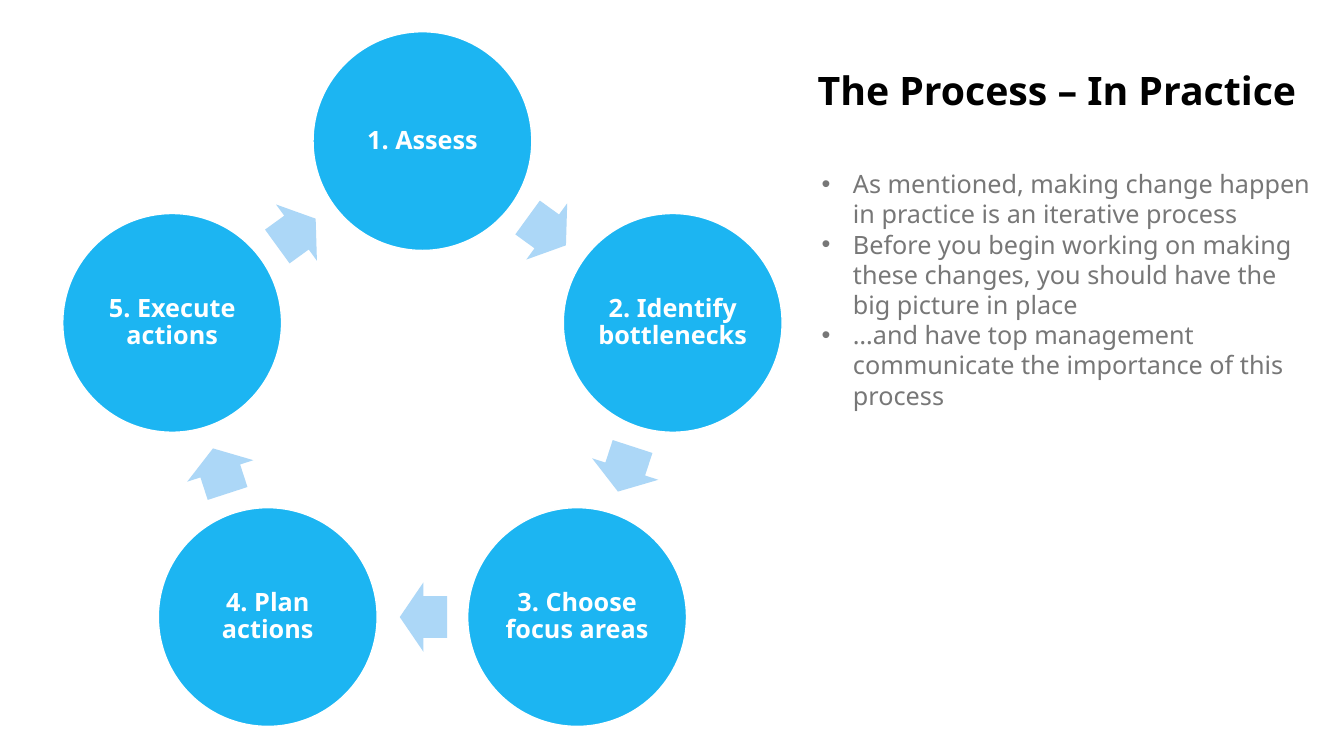
from dataclasses import dataclass
from math import cos, radians, sin

from lxml.etree import SubElement
from pptx import Presentation
from pptx.dml.color import RGBColor
from pptx.enum.shapes import MSO_SHAPE
from pptx.enum.text import MSO_ANCHOR, MSO_AUTO_SIZE, PP_ALIGN
from pptx.oxml.ns import qn
from pptx.util import Pt

EMU_PER_PX = 9144  # 100 px to the inch


@dataclass(frozen=True)
class Theme:
    font: str = "Noto Sans"
    circle: RGBColor = RGBColor(0x1C, 0xB5, 0xF2)
    arrow: RGBColor = RGBColor(0xAC, 0xD7, 0xF7)
    white: RGBColor = RGBColor(0xFF, 0xFF, 0xFF)
    title: RGBColor = RGBColor(0x00, 0x00, 0x00)
    body: RGBColor = RGBColor(0x77, 0x77, 0x77)
    title_size: int = 28
    text_size: int = 18


THEME = Theme()

STEPS = [
    "1. Assess",
    "2. Identify bottlenecks",
    "3. Choose focus areas",
    "4. Plan actions",
    "5. Execute actions",
]
POINTS = [
    "As mentioned, making change happen in practice is an iterative process",
    "Before you begin working on making these changes, you should have the big picture in place",
    "…and have top management communicate the importance of this process",
]

# Cycle geometry in px
CENTER_X, CENTER_Y, RING_RADIUS = 419, 401, 261
CIRCLE_SIZE = 217
ARROW_WIDTH, ARROW_HEIGHT, ARROW_SETBACK = 47, 69, 1


def px(length):
    return round(length * EMU_PER_PX)


def place(shape, left, top, width, height):
    shape.left, shape.top = px(left), px(top)
    shape.width, shape.height = px(width), px(height)


def format_runs(paragraph, size, color, bold=False):
    for run in paragraph.runs:
        run.font.name = THEME.font
        run.font.size = Pt(size)
        run.font.bold = bold
        run.font.color.rgb = color


def add_centered_shape(slide, kind, x, y, width, height, fill):
    shape = slide.shapes.add_shape(
        kind, px(x - width / 2), px(y - height / 2), px(width), px(height)
    )
    shape.shadow.inherit = False
    shape.fill.solid()
    shape.fill.fore_color.rgb = fill
    return shape


def add_step(slide, x, y, label):
    circle = add_centered_shape(
        slide, MSO_SHAPE.OVAL, x, y, CIRCLE_SIZE, CIRCLE_SIZE, THEME.circle
    )
    circle.line.color.rgb = THEME.white
    circle.line.width = Pt(1)
    frame = circle.text_frame
    frame.text = label
    frame.word_wrap = True
    frame.vertical_anchor = MSO_ANCHOR.MIDDLE
    frame.margin_left = frame.margin_right = 0
    frame.margin_top = frame.margin_bottom = px(3)
    paragraph = frame.paragraphs[0]
    paragraph.alignment = PP_ALIGN.CENTER
    paragraph.line_spacing = 0.9
    format_runs(paragraph, THEME.text_size, THEME.white, bold=True)


def add_arrow(slide, x, y, rotation):
    arrow = add_centered_shape(
        slide, MSO_SHAPE.RIGHT_ARROW, x, y, ARROW_WIDTH, ARROW_HEIGHT, THEME.arrow
    )
    arrow.adjustments[0], arrow.adjustments[1] = 0.6, 0.5
    arrow.line.fill.background()
    arrow.rotation = rotation


def add_cycle(slide, labels):
    step_angle = 360 / len(labels)
    arrow_radius = RING_RADIUS * cos(radians(step_angle / 2))
    for index, label in enumerate(labels):
        # Angles run clockwise from the top of the ring
        angle = radians(index * step_angle)
        add_step(
            slide,
            CENTER_X + RING_RADIUS * sin(angle),
            CENTER_Y - RING_RADIUS * cos(angle),
            label,
        )
        # Each arrow sits midway to the next step, along the tangent
        rotation = (index + 0.5) * step_angle
        middle = radians(rotation)
        add_arrow(
            slide,
            CENTER_X + arrow_radius * sin(middle) - ARROW_SETBACK * cos(middle),
            CENTER_Y - arrow_radius * cos(middle) - ARROW_SETBACK * sin(middle),
            rotation,
        )


def set_title(title, text):
    place(title, 801, 21, 533, 142)
    frame = title.text_frame
    frame.text = text
    frame.word_wrap = True
    frame.auto_size = MSO_AUTO_SIZE.NONE
    frame.vertical_anchor = MSO_ANCHOR.MIDDLE
    paragraph = frame.paragraphs[0]
    paragraph.alignment = PP_ALIGN.LEFT
    paragraph.line_spacing = 0.9
    format_runs(paragraph, THEME.title_size, THEME.title, bold=True)


def set_bullet(paragraph, indent):
    properties = paragraph._p.get_or_add_pPr()
    properties.set("marL", str(px(indent)))
    properties.set("indent", str(px(-indent)))
    SubElement(properties, qn("a:buFont"), typeface="Arial")
    SubElement(properties, qn("a:buChar"), char="•")


def set_list(body, points):
    place(body, 805, 162, 508, 252)
    frame = body.text_frame
    frame.text = "\n".join(points)
    frame.word_wrap = True
    frame.auto_size = MSO_AUTO_SIZE.SHAPE_TO_FIT_TEXT
    for paragraph in frame.paragraphs:
        paragraph.space_before = Pt(0)
        set_bullet(paragraph, 31)
        format_runs(paragraph, THEME.text_size, THEME.body)


def main():
    presentation = Presentation()
    presentation.slide_width = px(1333)
    presentation.slide_height = px(750)
    slide = presentation.slides.add_slide(presentation.slide_layouts[1])

    # Five-step cycle on the left
    add_cycle(slide, STEPS)

    # Title and explanation on the right
    set_title(slide.shapes.title, "The Process – In Practice")
    set_list(slide.placeholders[1], POINTS)

    presentation.save("out.pptx")


if __name__ == "__main__":
    main()
